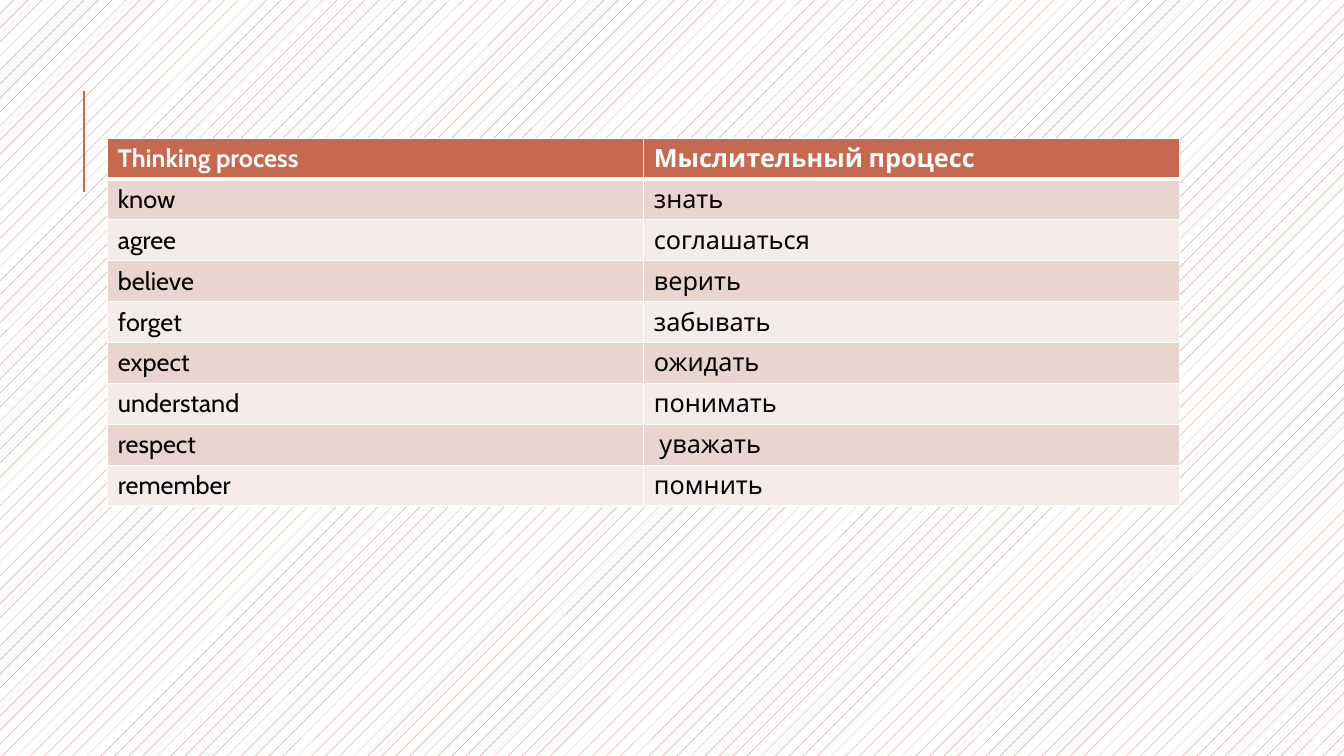
from typing import NamedTuple

from pptx import Presentation
from pptx.dml.color import RGBColor
from pptx.enum import dml, shapes
from pptx.oxml import parse_xml
from pptx.oxml.ns import nsdecls, qn
from pptx.util import Inches, Pt

RUST = RGBColor(0xC6, 0x69, 0x51)
ROSE = RGBColor(0xEA, 0xD4, 0xD0)
PALE = RGBColor(0xF5, 0xEB, 0xE9)
WHITE = RGBColor(0xFF, 0xFF, 0xFF)
BLACK = RGBColor(0, 0, 0)


class Verb(NamedTuple):
    english: str
    russian: str


HEAD = Verb("Thinking process", "Мыслительный процесс")
VERBS = [
    Verb("know", "знать"),
    Verb("agree", "соглашаться"),
    Verb("believe", "верить"),
    Verb("forget", "забывать"),
    Verb("expect", "ожидать"),
    Verb("understand", "понимать"),
    Verb("respect", " уважать"),
    Verb("remember", "помнить"),
]


def write(frame, words: str, *, size: float = 18, color: RGBColor = BLACK,
          bold: bool = False, font: str = "Cabin") -> None:
    run = frame.paragraphs[0].add_run()
    run.text = words
    run.font.name = font
    run.font.size = Pt(size)
    run.font.bold = bold
    run.font.color.rgb = color


def edge(cell, base: float) -> None:
    """Draw white cell borders, the bottom one base points wide."""
    props = cell._tc.get_or_add_tcPr()
    for place, side in enumerate("LRTB"):
        width = Pt(base if side == "B" else 1)
        props.insert(place, parse_xml(
            f'<a:ln{side} {nsdecls("a")} w="{width}"><a:solidFill>'
            f'<a:srgbClr val="{WHITE}"/></a:solidFill></a:ln{side}>'))


def add_rule(slide) -> None:
    x = Inches(0.83)
    rule = slide.shapes.add_connector(
        shapes.MSO_CONNECTOR.STRAIGHT, x, Inches(1.9), x, Inches(0.9))
    rule.line.color.rgb = RUST
    rule.line.width = Pt(1.5)
    rule._element.spPr.append(rule._element.makeelement(qn("a:effectLst"), {}))


def add_verbs(slide) -> None:
    rows = [HEAD, *VERBS]
    table = slide.shapes.add_table(
        len(rows), 2, Inches(1.07), Inches(1.37),
        Inches(10.63), Inches(3.65)).table
    for r, verb in enumerate(rows):
        top = r == 0
        for c, words in enumerate(verb):
            cell = table.cell(r, c)
            cell.fill.solid()
            cell.fill.fore_color.rgb = RUST if top else ROSE if r % 2 else PALE
            edge(cell, 3 if top else 1)
            write(cell.text_frame, words, bold=top,
                  color=WHITE if top else BLACK)


def main() -> None:
    deck = Presentation()
    deck.slide_width, deck.slide_height = Inches(13.33), Inches(7.5)
    slide = deck.slides.add_slide(deck.slide_layouts[6])
    fill = slide.background.fill
    fill.patterned()
    fill.pattern = dml.MSO_PATTERN.PERCENT_5
    fill.fore_color.rgb = RUST
    fill.back_color.rgb = WHITE
    add_rule(slide)
    add_verbs(slide)
    deck.save("out.pptx")


if __name__ == "__main__":
    main()
